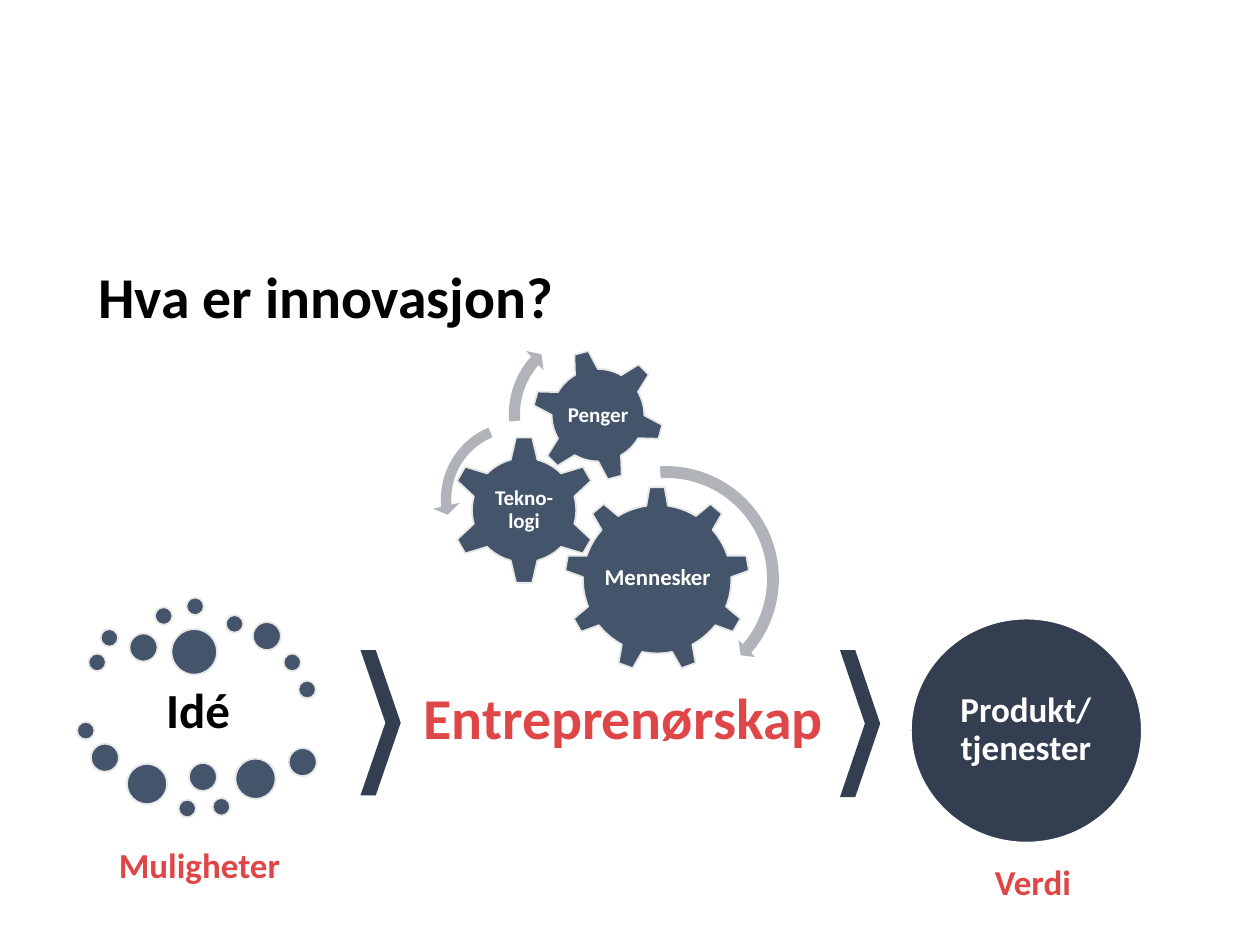
from pptx import Presentation
from pptx.dml.color import RGBColor
from pptx.enum.shapes import MSO_SHAPE
from pptx.enum.text import MSO_ANCHOR, PP_ALIGN
from pptx.util import Pt

OVAL, CHEVRON = MSO_SHAPE.OVAL, MSO_SHAPE.CHEVRON
GEAR6, GEAR9 = MSO_SHAPE.GEAR_6, MSO_SHAPE.GEAR_9
ARC, LEFT_ARC = MSO_SHAPE.CIRCULAR_ARROW, MSO_SHAPE.LEFT_CIRCULAR_ARROW
TOP, MIDDLE = MSO_ANCHOR.TOP, MSO_ANCHOR.MIDDLE
LEFT, CENTER = PP_ALIGN.LEFT, PP_ALIGN.CENTER

BLACK, WHITE, RED = "000000", "FFFFFF", "DE4648"
NAVY, SLATE, GREY, PALE = "333F50", "44546A", "B0B4B9", "E7E6E6"


def color(code):
    return RGBColor.from_string(code)


class Deck:
    font = "Calibri"

    def __init__(self, prs):
        self.slide = prs.slides.add_slide(prs.slide_layouts[6])
        self.shapes = self.slide.shapes

    def group(self):
        """Following elements go into a new group."""
        self.shapes = self.slide.shapes.add_group_shape().shapes

    def shape(self, kind, box, fill, line=None, adjust=(), turn=0):
        item = self.shapes.add_shape(kind, *map(Pt, box))
        item.shadow.inherit = False
        item.rotation = turn
        item.fill.solid()
        item.fill.fore_color.rgb = color(fill)
        if line:
            item.line.color.rgb = color(line)
            item.line.width = Pt(1)
        else:
            item.line.fill.background()
        for i, value in enumerate(adjust):
            item.adjustments[i] = value

    def text(self, words, box, size, ink, inset=None, wrap=True):
        """Plain text at top left, or a centred label when inset is given."""
        label = inset is not None
        frame = self.shapes.add_textbox(*map(Pt, box)).text_frame
        frame.word_wrap = wrap
        frame.vertical_anchor = MIDDLE if label else TOP
        para = frame.paragraphs[0]
        para.alignment = CENTER if label else LEFT
        if label:
            frame.margin_left = frame.margin_right = Pt(inset)
            frame.margin_top = frame.margin_bottom = Pt(inset)
            para.line_spacing = 0.9
        for i, part in enumerate(words.split("\n")):
            if i:
                para.add_line_break()
            run = para.add_run()
            run.text = part
            run.font.name = self.font
            run.font.size = Pt(size)
            run.font.bold = True
            run.font.color.rgb = color(ink)


def main():
    prs = Presentation()
    prs.slide_width, prs.slide_height = Pt(720), Pt(540)
    deck = Deck(prs)

    # Title
    deck.text("Hva er innovasjon?", (49, 145.5, 604, 53), 33, BLACK)

    # Flow from idea to product
    for left, high in ((206, 83), (480, 84)):
        deck.shape(CHEVRON, (left, 371.5, 23, high), NAVY, adjust=[0.62])
    deck.text("Entreprenørskap", (235, 386, 245.5, 47.5), 33, RED, wrap=False)
    deck.shape(OVAL, (520.5, 353.5, 132, 128), NAVY, WHITE)
    deck.text("Produkt/\ntjenester", (524, 363.5, 124.5, 107.5), 20, WHITE, 0)
    deck.text("Verdi", (528, 472.5, 124.5, 65.5), 20, RED, 4)

    # Gears: kind, left, top, size, turn, name, label box, text size
    deck.group()
    gears = [
        (GEAR9, 322.5, 278, 106, 0, "Mennesker", (344, 303, 63.5, 54.5), 13),
        (GEAR6, 257, 249, 85, 0, "Tekno-logi", (278.5, 270.5, 42, 42), 12),
        (GEAR6, 304, 199.5, 75.5, 345, "Penger", (320.5, 216, 42.5, 42.5), 12),
    ]
    for kind, left, top, size, turn, name, box, pt in gears:
        deck.shape(kind, (left, top, size, size), SLATE, PALE, turn=turn)
        deck.text(name, box, pt, WHITE, 1)

    # Turning arrows around the gears
    arcs = [
        (ARC, 313, 263, 135.5, (0.05, 2.99, 24.52, 160.08, 0.05)),
        (LEFT_ARC, 247, 236, 98.5, (0.06, 4.3, 104.89, 148.38, 0.08)),
        (ARC, 286.5, 183.5, 106.5, (0.06, 3.94, 133.14, 105.08, 0.07)),
    ]
    for kind, left, top, size, adjust in arcs:
        deck.shape(kind, (left, top, size, size), GREY, adjust=adjust)

    # Idea cloud
    deck.group()
    deck.text("Idé", (50.5, 386.5, 125.5, 41), 28, BLACK, 3)
    deck.text("Muligheter", (21, 468.5, 186, 53.5), 20, RED, 2)
    dots = {
        10: [(50.5, 373.5), (57.5, 359.5), (88.5, 347), (106.5, 341.5),
             (129, 351.5), (162, 373.5), (170.5, 389), (44, 412.5),
             (102, 457), (121.5, 456)],
        16: [(74, 362), (144.5, 355.5), (52, 425), (108, 436), (165, 427.5)],
        23: [(72.5, 436.5), (134.5, 433.5)],
        26: [(98, 359.5)],
    }
    for size, spots in dots.items():
        for left, top in spots:
            deck.shape(OVAL, (left, top, size, size), SLATE, PALE)

    prs.save("out.pptx")


if __name__ == "__main__":
    main()
